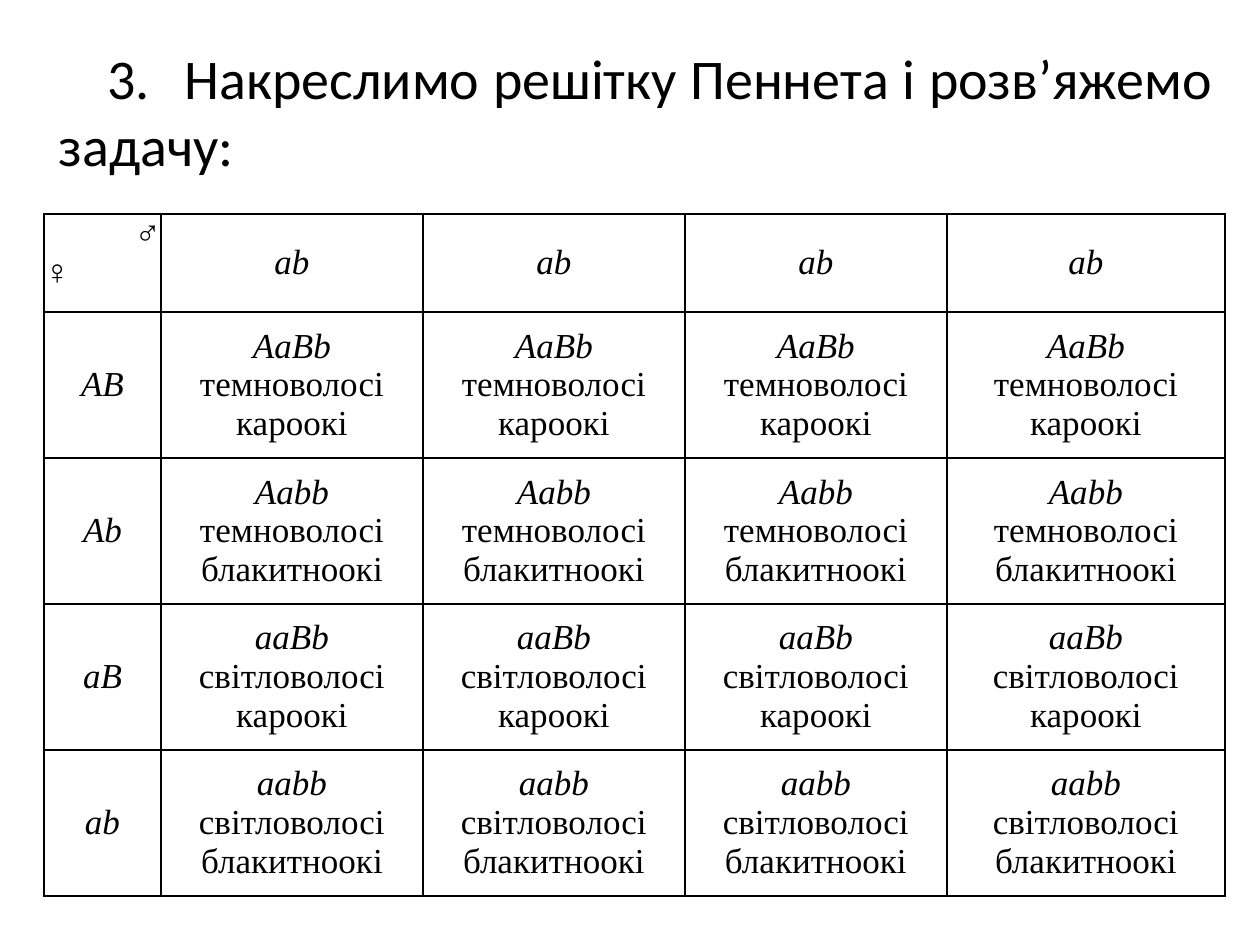
from dataclasses import dataclass

from lxml.etree import SubElement
from pptx import Presentation
from pptx.dml.color import RGBColor
from pptx.enum.text import MSO_ANCHOR as ANCHOR, PP_ALIGN as ALIGN
from pptx.oxml import parse_xml
from pptx.oxml.ns import nsdecls, qn
from pptx.util import Pt


@dataclass(frozen=True)
class Theme:
    ink: str = "000000"
    heading_font: str = "Calibri"
    heading_size: int = 32
    table_font: str = "Times New Roman"
    table_size: int = 20
    border: int = 1


theme = Theme()
EMU_PER_PX = 914400 / 126


def px(n):
    return round(n * EMU_PER_PX)


def add_text(p, text, font, size, align, italic=False):
    p.alignment = align
    r = p.add_run()
    r.text = text
    r.font.name = font
    r.font.size = Pt(size)
    r.font.italic = italic
    r.font.color.rgb = RGBColor.from_string(theme.ink)


prs = Presentation()
prs.slide_width, prs.slide_height = px(1260), px(945)
s = prs.slides.add_slide(prs.slide_layouts[1])
title = s.shapes.title.element
title.getparent().remove(title)

body = s.placeholders[1]
body.left, body.top, body.width, body.height = px(35), px(37), px(1191), px(173)
p = body.text_frame.paragraphs[0]
add_text(p, "3.\tНакреслимо решітку Пеннета і розв’яжемо задачу:",
         theme.heading_font, theme.heading_size, ALIGN.JUSTIFY)
pPr = p._p.get_or_add_pPr()
pPr.set("marL", str(px(11)))
pPr.set("indent", str(px(49)))
SubElement(pPr, qn("a:buNone"))

male_gametes = ["ab"] * 4
female_gametes = ["AB", "Ab", "aB", "ab"]
hair = {"A": "темноволосі", "a": "світловолосі"}
eyes = {"B": "кароокі", "b": "блакитноокі"}

grid = [[[("♂", ALIGN.RIGHT, False), ("♀", ALIGN.JUSTIFY, False)]]
        + [[(g, ALIGN.CENTER, True)] for g in male_gametes]]
for female in female_gametes:
    row = [[(female, ALIGN.CENTER, True)]]
    for male in male_gametes:
        genotype = female[0] + male[0] + female[1] + male[1]
        row.append([(genotype, ALIGN.CENTER, True),
                    (hair[female[0]], ALIGN.CENTER, False),
                    (eyes[female[1]], ALIGN.CENTER, False)])
    grid.append(row)

col_widths = [117, 262, 262, 262, 278]
row_heights = [98] + [146] * 4
table = s.shapes.add_table(len(row_heights), len(col_widths), px(44), px(214),
                           px(sum(col_widths)), px(sum(row_heights))).table
table.first_row = table.horz_banding = False
for col, width in zip(table.columns, col_widths):
    col.width = px(width)
for row, height in zip(table.rows, row_heights):
    row.height = px(height)

for i, row in enumerate(grid):
    for j, lines in enumerate(row):
        cell = table.cell(i, j)
        cell.margin_left = cell.margin_right = cell.margin_top = cell.margin_bottom = 0
        cell.vertical_anchor = ANCHOR.TOP if i == j == 0 else ANCHOR.MIDDLE
        cell.fill.background()
        tcPr = cell._tc.get_or_add_tcPr()
        for k, side in enumerate(("lnL", "lnR", "lnT", "lnB")):
            tcPr.insert(k, parse_xml(
                f'<a:{side} {nsdecls("a")} w="{Pt(theme.border)}"><a:solidFill>'
                f'<a:srgbClr val="{theme.ink}"/></a:solidFill></a:{side}>'))
        tf = cell.text_frame
        for k, (text, align, italic) in enumerate(lines):
            p = tf.add_paragraph() if k else tf.paragraphs[0]
            add_text(p, text, theme.table_font, theme.table_size, align, italic)

prs.save("out.pptx")
